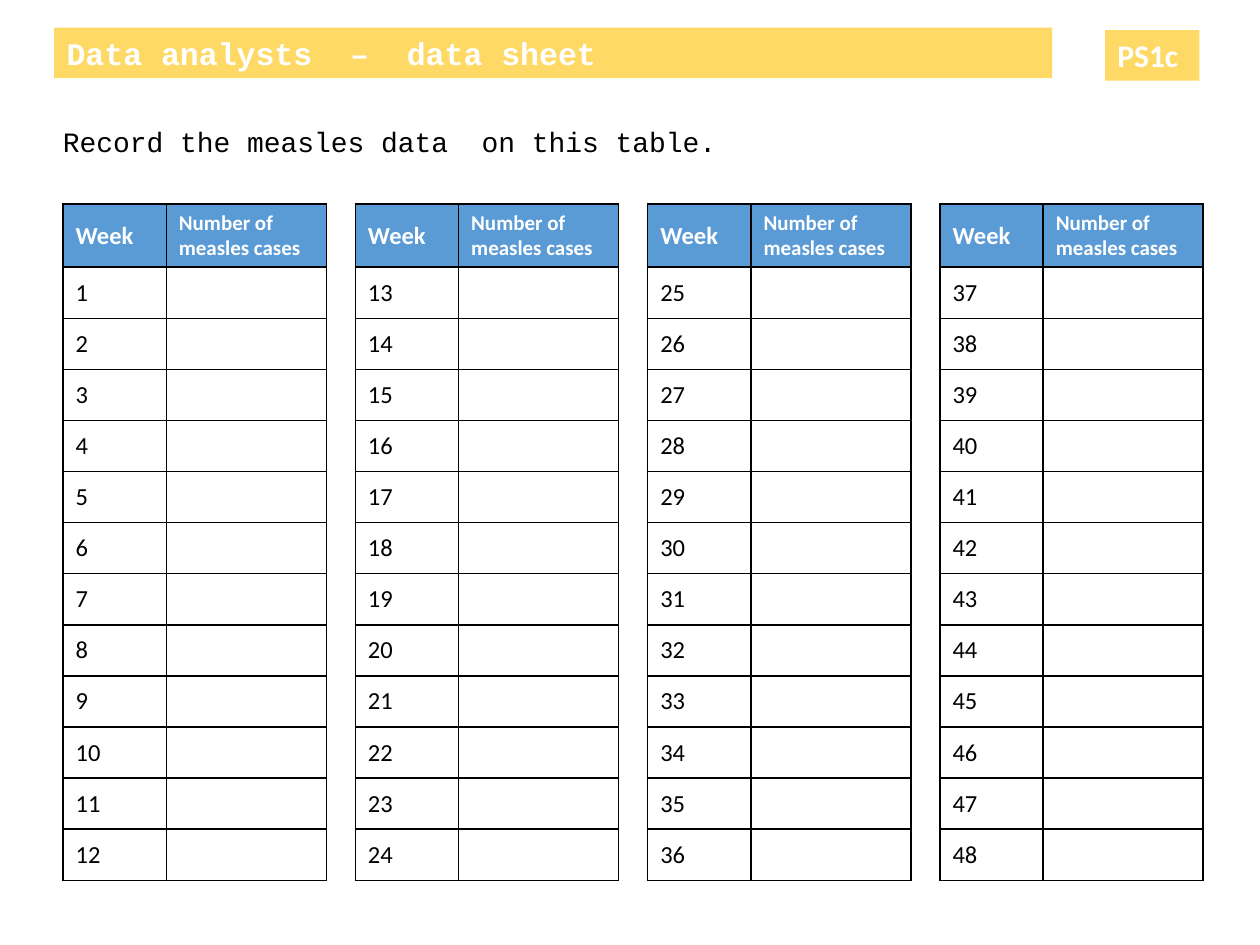
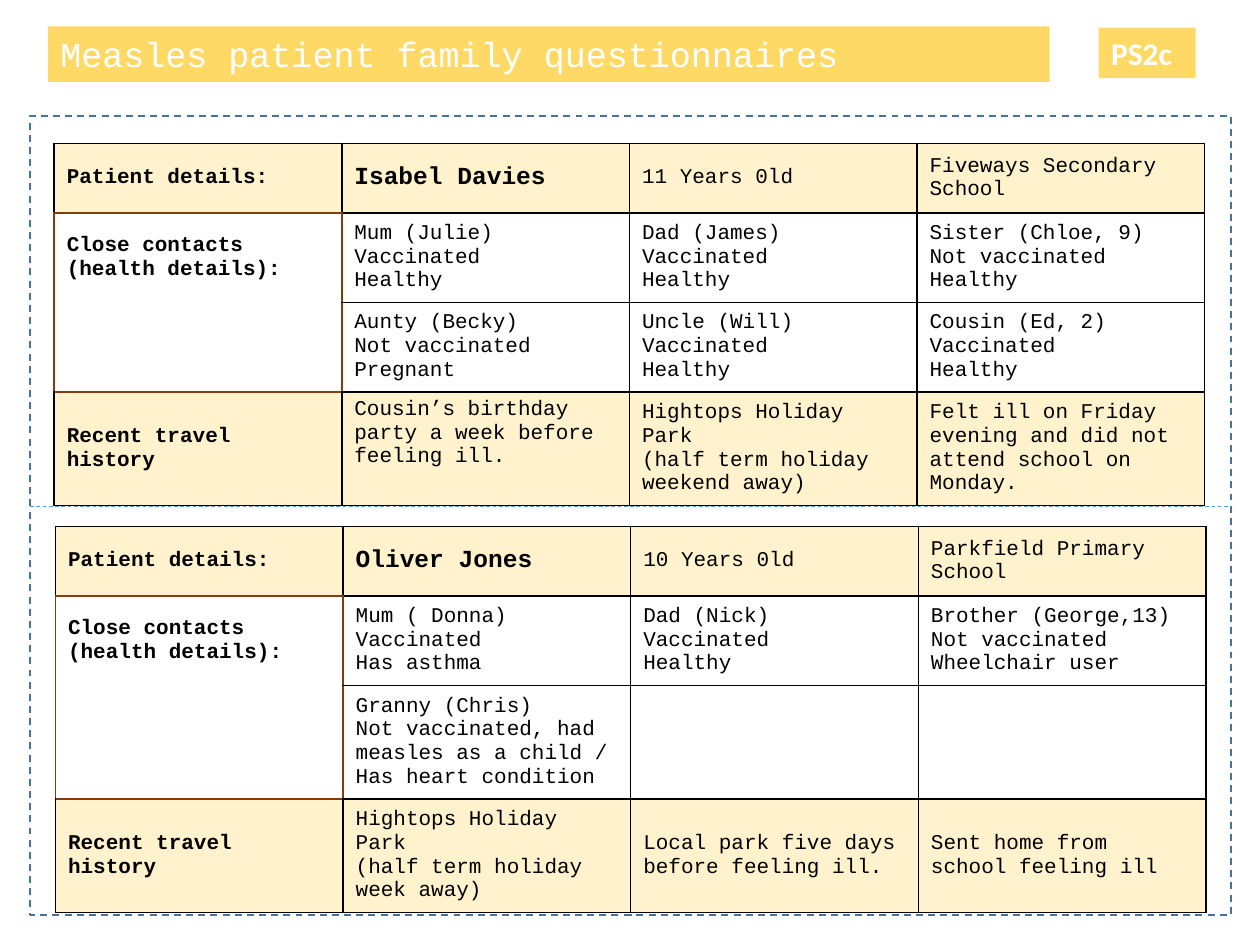
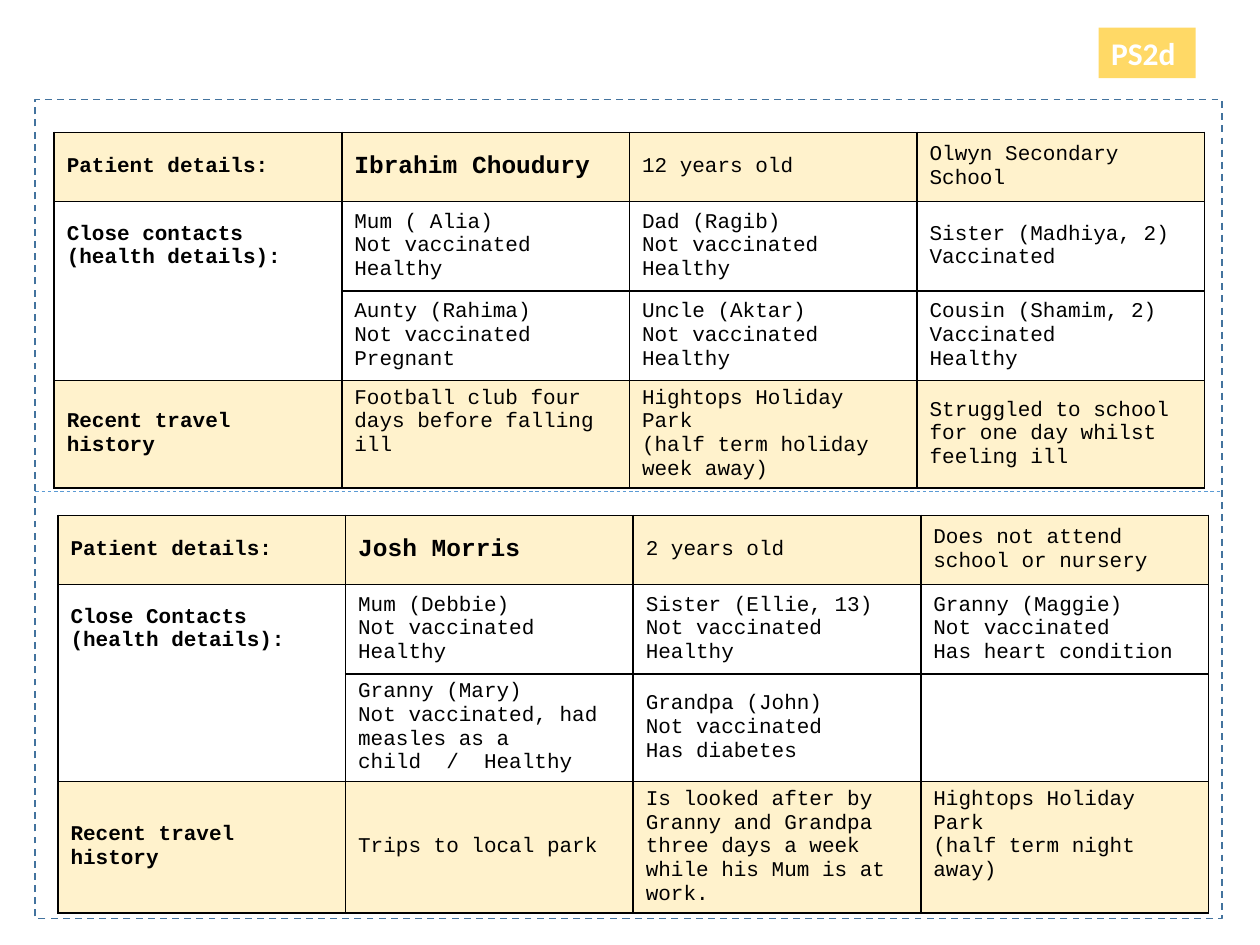
from lxml import etree
from pptx import Presentation
from pptx.dml.color import RGBColor
from pptx.enum.dml import MSO_LINE
from pptx.enum.shapes import MSO_CONNECTOR as LINK, MSO_SHAPE as SHAPE
from pptx.enum.text import MSO_ANCHOR as ANCHOR, PP_ALIGN as ALIGN
from pptx.oxml.ns import qn
from pptx.util import Inches, Pt

GOLD, CREAM, BLUE, NAVY = "FFD966", "FFF2CC", "5B9BD5", "43739E"
WHITE, BLACK, BROWN = "FFFFFF", "000000", "843C0B"
MONO, SANS = "Courier New", "Calibri"
PARK = "Hightops Holiday Park\n"

ISABEL = [
    ["Patient details:", "Isabel Davies", "11 Years 0ld",
     "Fiveways Secondary School"],
    ["Close contacts\n(health details):", "Mum (Julie)\nVaccinated\nHealthy",
     "Dad (James)\nVaccinated\nHealthy",
     "Sister (Chloe, 9)\nNot vaccinated\nHealthy"],
    ["", "Aunty (Becky)\nNot vaccinated\nPregnant",
     "Uncle (Will)\nVaccinated\nHealthy",
     "Cousin (Ed, 2)\nVaccinated\nHealthy"],
    ["Recent travel history",
     "Cousin’s birthday party a week before feeling ill.",
     PARK + "(half term holiday weekend away)",
     "Felt ill on Friday evening and did not attend school on Monday."],
]
OLIVER = [
    ["Patient details:", "Oliver Jones", "10 Years 0ld",
     "Parkfield Primary School"],
    ["Close contacts\n(health details):",
     "Mum ( Donna)\nVaccinated\nHas asthma",
     "Dad (Nick)\nVaccinated\nHealthy",
     "Brother (George,13)\nNot vaccinated\nWheelchair user"],
    ["", "Granny (Chris)\nNot vaccinated, had measles as a child / "
     "Has heart condition", "", ""],
    ["Recent travel history", PARK + "(half term holiday week away)",
     "Local park five days before feeling ill.",
     "Sent home from school feeling ill"],
]
IBRAHIM = [
    ["Patient details:", "Ibrahim Choudury", "12 years old",
     "Olwyn Secondary School"],
    ["Close contacts\n(health details):",
     "Mum ( Alia)\nNot vaccinated\nHealthy",
     "Dad (Ragib)\nNot vaccinated\nHealthy",
     "Sister (Madhiya, 2)\nVaccinated"],
    ["", "Aunty (Rahima)\nNot vaccinated\nPregnant",
     "Uncle (Aktar)\nNot vaccinated\nHealthy",
     "Cousin (Shamim, 2)\nVaccinated\nHealthy"],
    ["Recent travel history", "Football club four days before falling ill",
     PARK + "(half term holiday week away)",
     "Struggled to school for one day whilst feeling ill"],
]
JOSH = [
    ["Patient details:", "Josh Morris", "2 years old",
     "Does not attend school or nursery"],
    ["Close Contacts (health details):",
     "Mum (Debbie)\nNot vaccinated\nHealthy",
     "Sister (Ellie, 13)\nNot vaccinated\nHealthy",
     "Granny (Maggie)\nNot vaccinated\nHas heart condition"],
    ["", "Granny (Mary)\nNot vaccinated, had measles as a child  /  Healthy",
     "Grandpa (John)\nNot vaccinated\nHas diabetes", ""],
    ["Recent travel history", "Trips to local park",
     "Is looked after by Granny and Grandpa three days a week while his "
     "Mum is at work.", PARK + "(half term night away)"],
]


def rgb(code):
    return RGBColor.from_string(code)


def write(frame, text, size, font=MONO, color=BLACK, bold=False):
    frame.text = text
    frame.word_wrap = True
    for para in frame.paragraphs:
        para.alignment = ALIGN.LEFT
        for run in para.runs:
            run.font.size = Pt(size)
            run.font.name = font
            run.font.bold = bold
            run.font.color.rgb = rgb(color)


def add_band(slide, box, text, size=18, font=MONO, bold=True):
    band = slide.shapes.add_shape(SHAPE.RECTANGLE, *map(Inches, box))
    band.shadow.inherit = False
    band.fill.solid()
    band.fill.fore_color.rgb = rgb(GOLD)
    band.line.fill.background()
    band.text_frame.vertical_anchor = ANCHOR.TOP
    write(band.text_frame, text, size, font, WHITE, bold)


def add_tag(slide, box, text):
    add_band(slide, box, text, font=SANS)


def set_edges(cell, **edges):
    props = cell._tc.get_or_add_tcPr()
    for side in "LRTB":
        color = edges.get(side, BLACK)
        line = etree.SubElement(props, qn("a:ln" + side), w=str(Pt(1)))
        if color:
            fill = etree.SubElement(line, qn("a:solidFill"))
            etree.SubElement(fill, qn("a:srgbClr"), val=color)
        else:
            etree.SubElement(line, qn("a:noFill"))


def style_cell(cell, fill, anchor=ANCHOR.MIDDLE, **edges):
    set_edges(cell, **edges)
    cell.fill.solid()
    cell.fill.fore_color.rgb = rgb(fill)
    cell.vertical_anchor = anchor


def add_grid(slide, left, top, cols, rows):
    box = map(Inches, (left, top, sum(cols), sum(rows)))
    grid = slide.shapes.add_table(len(rows), len(cols), *box).table
    grid.horz_banding = False
    for col, width in zip(grid.columns, cols):
        col.width = Inches(width)
    for row, height in zip(grid.rows, rows):
        row.height = Inches(height)
    return grid


def add_weeks(slide, left, top, first, count=12):
    head, full = 0.5, 5.37
    rows = [head] + [(full - head) / count] * count
    grid = add_grid(slide, left, top, (0.82, 1.27), rows)
    for cell in grid.iter_cells():
        style_cell(cell, WHITE)
    heads = (("Week", 14), ("Number of measles cases", 12))
    for col, (text, size) in enumerate(heads):
        cell = grid.cell(0, col)
        cell.fill.fore_color.rgb = rgb(BLUE)
        write(cell.text_frame, text, size, SANS, WHITE, True)
    for row in range(1, count + 1):
        week = str(first + row - 1)
        write(grid.cell(row, 0).text_frame, week, 14, SANS)


def label_edges(row, col, edge):
    if col == 0:
        return ({"B": edge}, {"L": edge, "T": edge, "R": edge, "B": None},
                {"L": edge, "T": None, "R": edge, "B": edge},
                {"T": edge})[row]
    return {"L": edge} if col == 1 and row in (1, 2) else {}


def add_case(slide, left, top, rows, data, edge, high=None):
    grid = add_grid(slide, left, top, [2.283] * 4, rows)
    for row, texts in enumerate(data):
        for col, text in enumerate(texts):
            cell = grid.cell(row, col)
            fill = CREAM if row in (0, 3) else WHITE
            anchor = ANCHOR.TOP if (row, col) == high else ANCHOR.MIDDLE
            style_cell(cell, fill, anchor, **label_edges(row, col, edge))
            name = (row, col) == (0, 1)
            write(cell.text_frame, text, 14 if name else 12,
                  bold=name or col == 0)


def add_frame(slide, box, fold):
    left, top, width, height = box
    frame = slide.shapes.add_shape(SHAPE.RECTANGLE, *map(Inches, box))
    frame.shadow.inherit = False
    frame.fill.background()
    ends = map(Inches, (left, top + fold, left + width, top + fold))
    cut = slide.shapes.add_connector(LINK.STRAIGHT, *ends)
    etree.SubElement(cut._element.spPr, qn("a:effectLst"))
    for item, color, weight in ((frame, NAVY, 1), (cut, BLUE, 0.5)):
        item.line.color.rgb = rgb(color)
        item.line.width = Pt(weight)
        item.line.dash_style = MSO_LINE.DASH


def fill_sheet(slide):
    add_band(slide, (0.43, 0.22, 7.92, 0.4), "Data analysts  –  data sheet")
    note = slide.shapes.add_textbox(*map(Inches, (0.4, 0.94, 7.95, 0.67)))
    write(note.text_frame, "Record the measles data  on this table.", 16)
    for part in range(4):
        add_weeks(slide, 0.5 + 2.32 * part, 1.62, 1 + 12 * part)
    add_tag(slide, (8.77, 0.24, 0.75, 0.4), "PS1c")


def fill_cases(slide, tag, box, fold, cases, edge=BLACK):
    add_frame(slide, box, fold)
    for left, top, rows, data, high in cases:
        add_case(slide, left, box[1] + top, rows, data, edge, high)
    add_tag(slide, (8.72, 0.22, 0.77, 0.4), tag)


def main():
    deck = Presentation()
    deck.slide_width, deck.slide_height = Inches(10), Inches(7.5)
    sheet, first, second = (
        deck.slides.add_slide(deck.slide_layouts[6]) for _ in range(3))
    fill_sheet(sheet)
    fill_cases(first, "PS2c", (0.24, 0.92, 9.53, 6.34), 3.1, (
        (0.43, 0.22, (0.55, 0.71, 0.71, 0.9), ISABEL, (3, 1)),
        (0.44, 3.26, (0.55, 0.71, 0.9, 0.9), OLIVER, None)), BROWN)
    add_band(first, (0.38, 0.21, 7.95, 0.44),
             "Measles patient family questionnaires", 20, bold=False)
    fill_cases(second, "PS2d", (0.28, 0.79, 9.42, 6.5), 3.11, (
        (0.43, 0.26, (0.55, 0.71, 0.71, 0.85), IBRAHIM, (3, 1)),
        (0.46, 3.3, (0.55, 0.71, 0.85, 1.04), JOSH, (3, 3))))
    deck.save("out.pptx")


if __name__ == "__main__":
    main()
